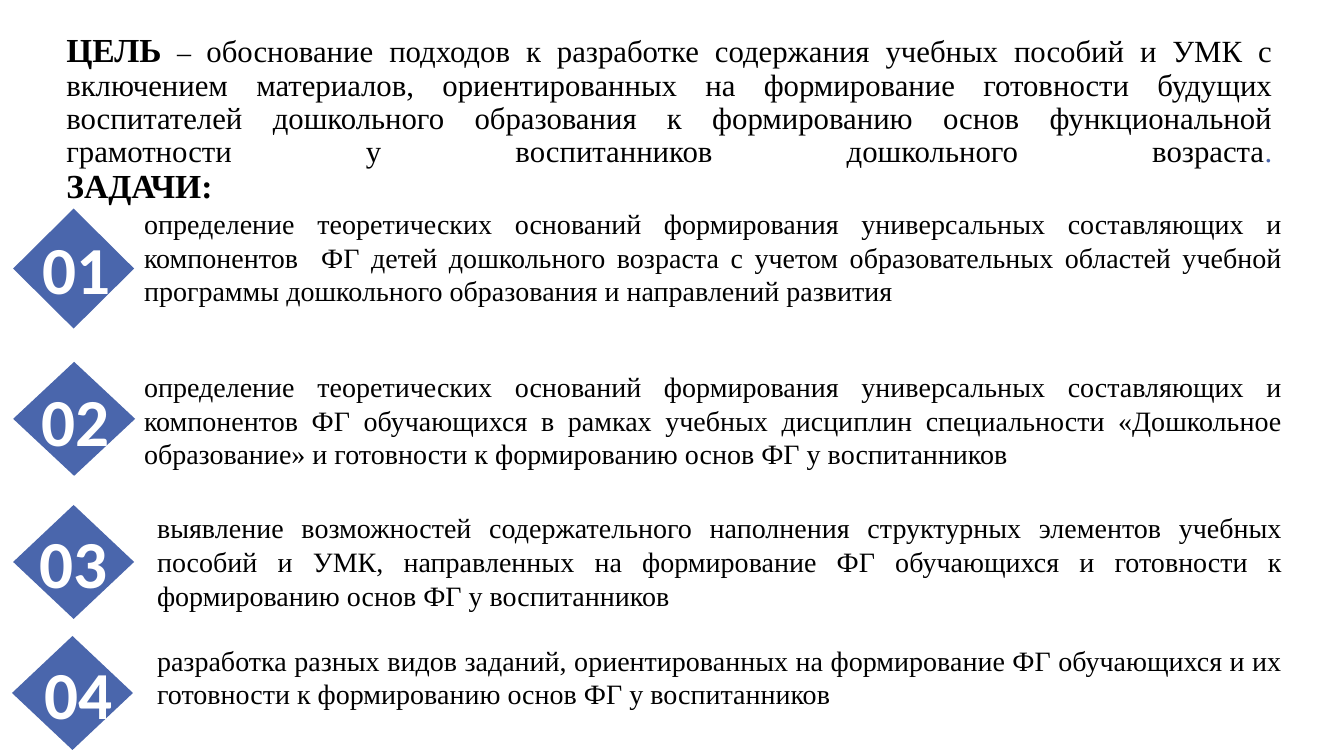
"""Build the slide with the goal and the four numbered tasks of the study."""
from pptx import Presentation
from pptx.dml.color import RGBColor
from pptx.enum.shapes import MSO_SHAPE as Shape
from pptx.enum.text import MSO_ANCHOR as Anchor, PP_ALIGN as Align
from pptx.util import Pt

BLACK = RGBColor(0x00, 0x00, 0x00)
WHITE = RGBColor(0xFF, 0xFF, 0xFF)
BLUE = RGBColor(0x4A, 0x66, 0xAC)
SERIF, SANS = "Times New Roman", "Calibri"

GOAL_RUNS = [
    ("ЦЕЛЬ", 24, True, BLACK),
    (" ", 20, True, BLACK),
    ("– ", 20, False, BLACK),
    ("обоснование подходов к разработке содержания учебных пособий и УМК с "
     "включением материалов, ориентированных на формирование готовности будущих "
     "воспитателей дошкольного образования к формированию основ функциональной "
     "грамотности у воспитанников дошкольного возраста", 22, False, BLACK),
    (".", 22, False, BLUE),
    None,
    ("ЗАДАЧИ:", 24, True, BLACK),
]

# text, (text left, top, height), (diamond left, top, width, height), (number left, top)
TASKS = [
    ("определение теоретических оснований формирования универсальных составляющих и "
     "компонентов  ФГ детей дошкольного возраста с учетом образовательных областей "
     "учебной программы дошкольного образования и направлений развития",
     (95.8, 144, 80), (9.4, 149, 86.4, 85.7), (22.3, 159.1)),
    ("определение теоретических оснований формирования универсальных составляющих и "
     "компонентов ФГ обучающихся в рамках учебных дисциплин специальности «Дошкольное "
     "образование» и готовности к формированию основ ФГ у воспитанников",
     (95.8, 260.6, 80), (9.4, 258.5, 87.1, 81.4), (21.6, 267.1)),
    ("выявление возможностей содержательного наполнения структурных элементов учебных "
     "пособий и УМК, направленных на формирование ФГ обучающихся и готовности к "
     "формированию основ ФГ у воспитанников",
     (105.1, 361.4, 80), (9.4, 360.7, 86.4, 81.4), (20.2, 368.6)),
    ("разработка разных видов заданий, ориентированных на формирование ФГ обучающихся и "
     "их готовности к формированию основ ФГ у воспитанников",
     (105.1, 455.8, 55.4), (8.6, 454.3, 86.4, 81.4), (23.8, 462.2)),
]
TEXT_RIGHT = 923
NUMBER_SIZE = (64.1, 65.5)


def style(run, name, size, bold, color):
    font = run.font
    font.name, font.size, font.bold = name, Pt(size), bold
    font.color.rgb = color


def add_text(slide, box, text, alignment, name, size, bold, color, wrap=True):
    frame = slide.shapes.add_textbox(*map(Pt, box)).text_frame
    frame.word_wrap = wrap
    paragraph = frame.paragraphs[0]
    paragraph.text = text
    paragraph.alignment = alignment
    style(paragraph.runs[0], name, size, bold, color)


def add_goal(slide):
    frame = slide.shapes.add_textbox(Pt(40.3), Pt(28.8), Pt(875.5), Pt(92.2)).text_frame
    frame.word_wrap = True
    frame.vertical_anchor = Anchor.MIDDLE
    frame.margin_top = Pt(24.3)
    paragraph = frame.paragraphs[0]
    paragraph.alignment = Align.JUSTIFY
    paragraph.line_spacing = 0.9
    for part in GOAL_RUNS:
        if part is None:
            paragraph.add_line_break()
            continue
        text, size, bold, color = part
        run = paragraph.add_run()
        run.text = text
        style(run, SERIF, size, bold, color)


def add_task(slide, number, text, text_place, diamond_box, number_place):
    left, top, height = text_place
    add_text(slide, (left, top, TEXT_RIGHT - left, height), text,
             Align.JUSTIFY, SERIF, 20, False, BLACK)
    diamond = slide.shapes.add_shape(Shape.FLOWCHART_DECISION, *map(Pt, diamond_box))
    diamond.shadow.inherit = False
    diamond.fill.solid()
    diamond.fill.fore_color.rgb = BLUE
    diamond.line.fill.background()
    add_text(slide, number_place + NUMBER_SIZE, f"{number:02d}",
             Align.CENTER, SANS, 48, True, WHITE, wrap=False)


def main():
    presentation = Presentation()
    presentation.slide_width, presentation.slide_height = Pt(960), Pt(540)
    slide = presentation.slides.add_slide(presentation.slide_layouts[6])
    add_goal(slide)
    for number, task in enumerate(TASKS, 1):
        add_task(slide, number, *task)
    presentation.save("out.pptx")


if __name__ == "__main__":
    main()
